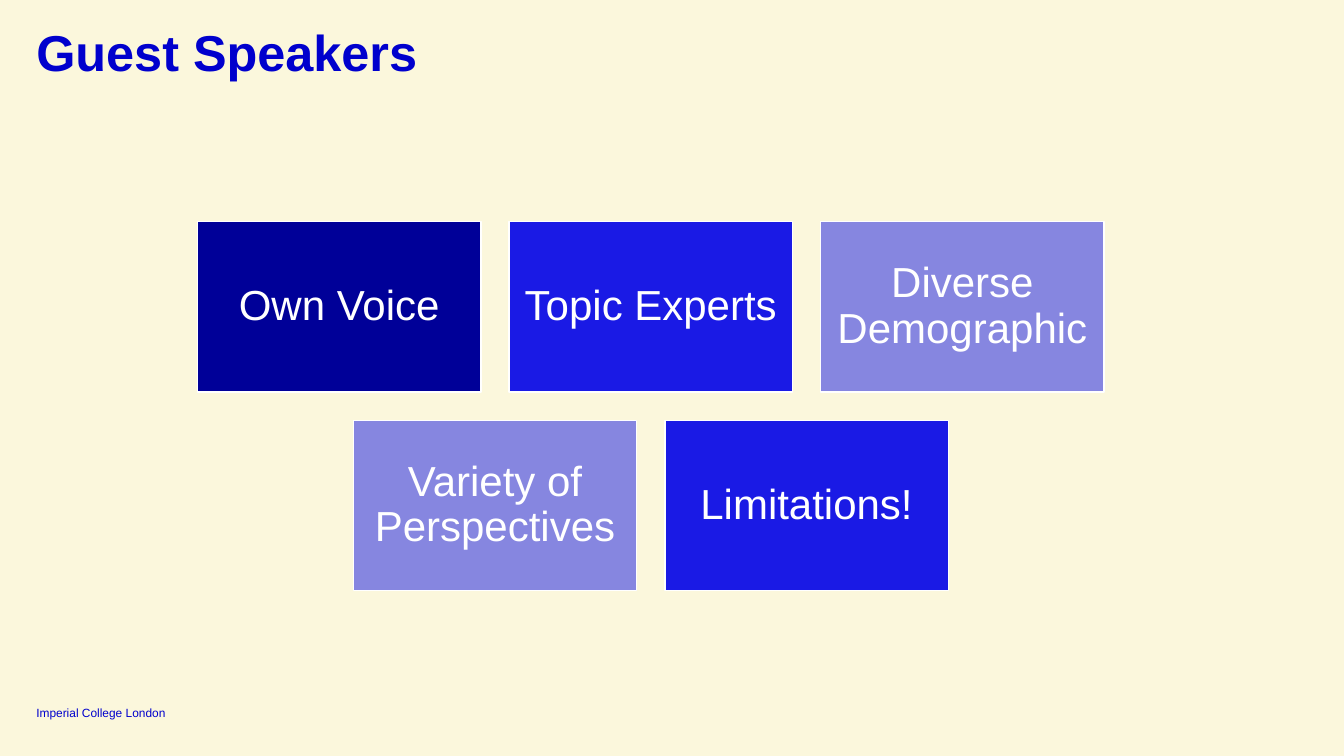
"""Build the Guest Speakers slide with its centred rows of topic tiles."""
from dataclasses import dataclass

import pptx
import pptx.dml.color
import pptx.enum.shapes
import pptx.enum.text
import pptx.util

COLOURS = {
    "cream": "FBF7DC",
    "title": "0000CD",
    "navy": "000098",
    "blue": "1A1AE5",
    "lavender": "8686E0",
    "white": "FFFFFF",
}
Anchor = pptx.enum.text.MSO_ANCHOR
Align = pptx.enum.text.PP_ALIGN

SLIDE_WIDTH, SLIDE_HEIGHT = 13.33, 7.5
LEFT_MARGIN = 0.36
TILE_WIDTH, TILE_HEIGHT = 2.81, 1.69
COLUMN_STEP, ROW_STEP = 3.09, 1.97
GRID_LEFT, GRID_TOP = 1.96, 2.2


@dataclass(frozen=True)
class Topic:
    label: str
    colour: str
    column: float
    row: int


TOPICS = [
    Topic("Own Voice", "navy", 0, 0),
    Topic("Topic Experts", "blue", 1, 0),
    Topic("Diverse Demographic", "lavender", 2, 0),
    Topic("Variety of Perspectives", "lavender", 0.5, 1),
    Topic("Limitations!", "blue", 1.5, 1),
]


def rgb(colour: str) -> pptx.dml.color.RGBColor:
    return pptx.dml.color.RGBColor.from_string(COLOURS[colour])


def write(shape, text: str, *, size: float, colour: str, bold: bool = False,
          align=Align.LEFT, anchor=Anchor.TOP, inset: float = 0,
          line_spacing: float = 1.0) -> None:
    frame = shape.text_frame
    frame.word_wrap = True
    frame.vertical_anchor = anchor
    frame.margin_left = frame.margin_right = pptx.util.Inches(inset)
    frame.margin_top = frame.margin_bottom = pptx.util.Inches(inset)
    paragraph = frame.paragraphs[0]
    paragraph.alignment = align
    paragraph.line_spacing = line_spacing
    run = paragraph.add_run()
    run.text = text
    run.font.name = "Arial"
    run.font.size = pptx.util.Pt(size)
    run.font.bold = bold
    run.font.color.rgb = rgb(colour)


def add_label(slide, top: float, width: float, height: float, text: str, **text_format) -> None:
    box = slide.shapes.add_textbox(
        *map(pptx.util.Inches, (LEFT_MARGIN, top, width, height)))
    write(box, text, colour="title", **text_format)


def add_tile(slide, topic: Topic) -> None:
    left = GRID_LEFT + topic.column * COLUMN_STEP
    top = GRID_TOP + topic.row * ROW_STEP
    tile = slide.shapes.add_shape(
        pptx.enum.shapes.MSO_SHAPE.RECTANGLE,
        *map(pptx.util.Inches, (left, top, TILE_WIDTH, TILE_HEIGHT)))
    tile.shadow.inherit = False
    tile.fill.solid()
    tile.fill.fore_color.rgb = rgb(topic.colour)
    tile.line.color.rgb = rgb("white")
    tile.line.width = pptx.util.Pt(1)
    write(tile, topic.label, size=30, colour="white", align=Align.CENTER,
          anchor=Anchor.MIDDLE, inset=0.12, line_spacing=0.9)


def main() -> None:
    deck = pptx.Presentation()
    deck.slide_width = pptx.util.Inches(SLIDE_WIDTH)
    deck.slide_height = pptx.util.Inches(SLIDE_HEIGHT)
    slide = deck.slides.add_slide(deck.slide_layouts[6])
    slide.background.fill.solid()
    slide.background.fill.fore_color.rgb = rgb("cream")

    add_label(slide, 6.99, 1.55, 0.15, "Imperial College London",
              size=8.5, anchor=Anchor.BOTTOM)
    add_label(slide, 0.28, 12.62, 0.41, "Guest Speakers",
              size=36, bold=True, line_spacing=0.9)
    for topic in TOPICS:
        add_tile(slide, topic)

    deck.save("out.pptx")


if __name__ == "__main__":
    main()
